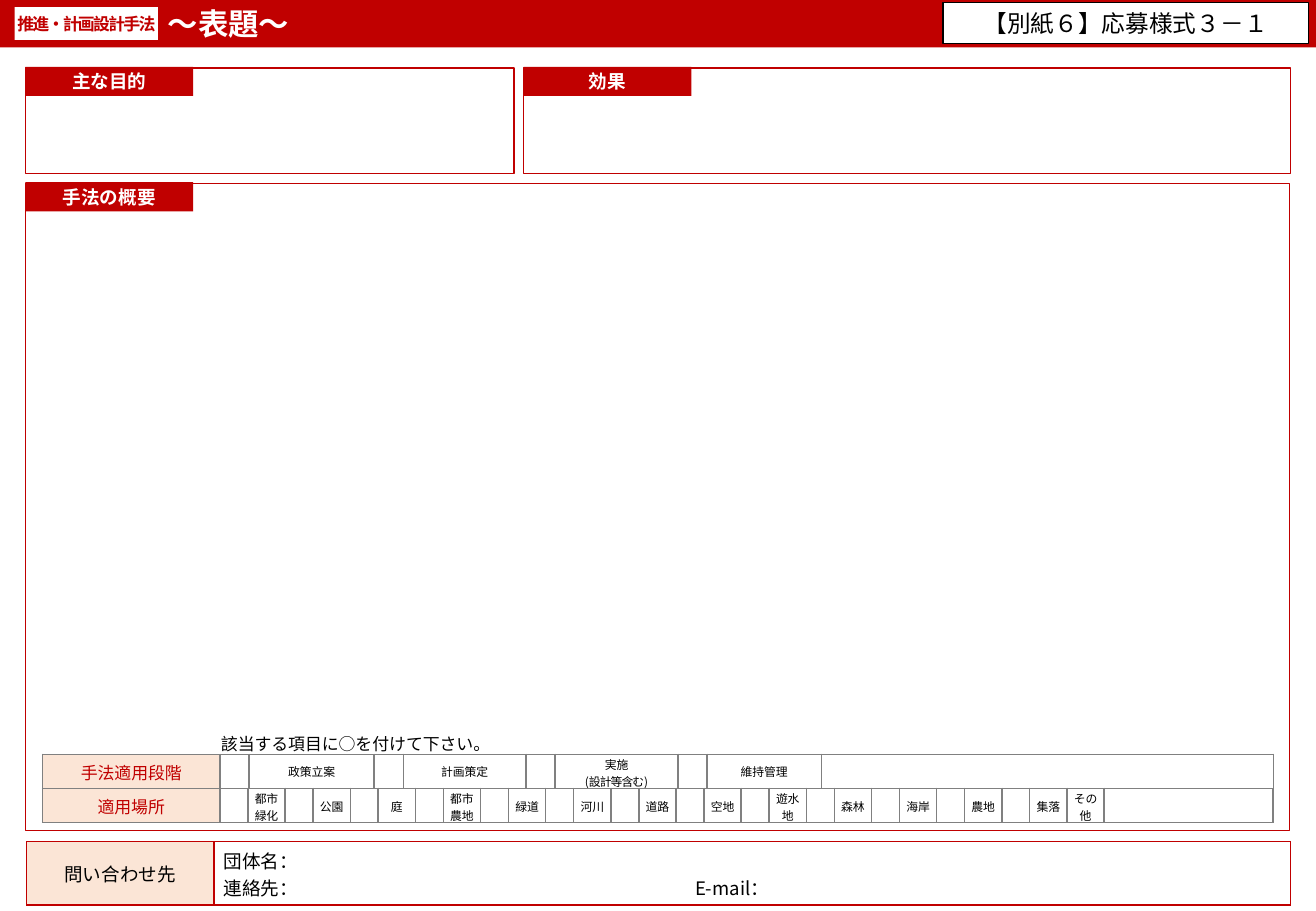
"""Build the one-page application form for a promotion, planning and design method."""
from lxml import etree
from pptx import Presentation
from pptx.dml.color import RGBColor
from pptx.enum.shapes import MSO_SHAPE
from pptx.enum.text import MSO_ANCHOR, PP_ALIGN
from pptx.oxml.ns import qn
from pptx.util import Inches, Pt

RECTANGLE = MSO_SHAPE.RECTANGLE
MIDDLE = MSO_ANCHOR.MIDDLE
CENTER, LEFT = PP_ALIGN.CENTER, PP_ALIGN.LEFT
RED = RGBColor(0xC0, 0x00, 0x00)
PEACH = RGBColor(0xFB, 0xE5, 0xD6)
GRAY = RGBColor(0x80, 0x80, 0x80)
WHITE = RGBColor(0xFF, 0xFF, 0xFF)
BLACK = RGBColor(0x00, 0x00, 0x00)
FONT = "Noto Sans CJK JP"
TIGHT = (0.01, 0.01, 0.01, 0)
ROOMY = (0.08, 0.04, 0.08, 0.04)


def write(frame, text, size, color, align=CENTER, bold=False, spacing=0):
    """Fill a text frame with one paragraph per line of text."""
    formats = {"size": Pt(size), "bold": bold, "name": FONT}
    frame.word_wrap = True
    for index, line in enumerate(text.split("\n")):
        para = frame.add_paragraph() if index else frame.paragraphs[0]
        para.alignment = align
        if not line:
            etree.SubElement(para._p, qn("a:endParaRPr"), sz=str(size * 100))
            continue
        span = para.add_run()
        span.text = line
        for name, value in formats.items():
            setattr(span.font, name, value)
        span.font.color.rgb = color
        properties = span.font._element
        properties.set("spc", str(-50 if line.startswith("(") else spacing))
        etree.SubElement(properties, qn("a:ea"), typeface=FONT)


def draw_table(left, top, height, widths, entries, border):
    """Draw a one-row table from (text, size, colour, alignment, margins, fill) entries."""
    frame = page.shapes.add_table(1, len(widths), Inches(left), Inches(top),
                                  Inches(sum(widths)), Inches(height))
    table = frame.table
    table.first_row = table.horz_banding = False
    table.rows[0].height = Inches(height)
    for column, width, cell, entry in zip(table.columns, widths, table.rows[0].cells, entries):
        text, size, color, align, margins, fill = entry
        column.width = Inches(width)
        cell.vertical_anchor = MIDDLE
        for side, margin in zip(("left", "top", "right", "bottom"), margins):
            setattr(cell, f"margin_{side}", Inches(margin))
        write(cell.text_frame, text, size, color, align)
        for edge in ("a:lnL", "a:lnR", "a:lnT", "a:lnB"):
            line = etree.SubElement(cell._tc.get_or_add_tcPr(), qn(edge), w=str(Pt(1)))
            solid = etree.SubElement(line, qn("a:solidFill"))
            etree.SubElement(solid, qn("a:srgbClr"), val=str(border))
        if fill is None:
            cell.fill.background()
        else:
            cell.fill.solid()
            cell.fill.fore_color.rgb = fill
    return table


deck = Presentation()
deck.slide_width, deck.slide_height = Inches(10.83), Inches(7.5)
page = deck.slides.add_slide(deck.slide_layouts[5])

title = page.shapes.title
title.left, title.top, title.width, title.height = 0, 0, deck.slide_width, Inches(0.39)
title.fill.solid()
title.fill.fore_color.rgb = RED
title.text_frame.margin_left = Inches(1.38)
title.text_frame.vertical_anchor = MIDDLE
write(title.text_frame, "～表題～", 18, WHITE, LEFT, bold=True)

panels = [
    ("主な目的", 0.21, 0.56, 4.02, 0.87),
    ("効果", 4.31, 0.56, 6.31, 0.87),
    ("手法の概要", 0.21, 1.51, 10.4, 5.33),
]
boxes = [("推進・計画設計手法", 0.12, 0.06, 1.18, 0.27, WHITE, None, 10, RED, True, -100),
         ("【別紙６】応募様式３－１", 7.76, 0.02, 3.01, 0.34, WHITE, BLACK, 14, BLACK, False, 0)]
for heading, left, top, width, height in panels:
    boxes.append(("", left, top, width, height, None, RED, 11, RED, False, 0))
    boxes.append((heading, left, top - 0.01, 1.38, 0.24, RED, None, 11, WHITE, True, 0))

for text, left, top, width, height, fill, outline, size, color, bold, spacing in boxes:
    box = page.shapes.add_shape(RECTANGLE, Inches(left), Inches(top),
                                Inches(width), Inches(height))
    box.shadow.inherit = False
    if fill is None:
        box.fill.background()
    else:
        box.fill.solid()
        box.fill.fore_color.rgb = fill
    if outline is None:
        box.line.fill.background()
    else:
        box.line.color.rgb = outline
        box.line.width = Pt(0.75)
    frame = box.text_frame
    frame.vertical_anchor = MIDDLE
    frame.margin_left = frame.margin_right = 0
    write(frame, text, size, color, bold=bold, spacing=spacing)

hint = page.shapes.add_textbox(Inches(1.72), Inches(5.99), Inches(2.42), Inches(0.27))
write(hint.text_frame, "該当する項目に○を付けて下さい。", 10, BLACK, LEFT)

stages = ["政策立案", "計画策定", "実施\n(設計等含む)", "維持管理"]
places = ["都市\n緑化", "公園", "庭", "都市\n農地", "緑道", "河川", "道路", "空地",
          "遊水地", "森林", "海岸", "農地", "集落"]
stage_texts = [text for stage in stages for text in ("", stage)] + [""]
place_texts = [text for place in places for text in ("", place)] + ["その\n他", ""]

mark = 0.23
label = (7.28 - mark * len(places)) / (len(places) + 1)
stage_widths = [1.46, 0.24, 1.03, 0.24, 1.01, 0.24, 1.01, 0.24, 0.94, 3.72]
place_widths = [1.46] + [mark, label] * len(places) + [label, 1.39]

choices = [("手法適用段階", 6.21, stage_widths, stage_texts),
           ("適用場所", 6.49, place_widths, place_texts)]
for heading, top, widths, texts in choices:
    entries = [(heading, 10, RED, CENTER, TIGHT, PEACH)]
    entries += [(text, 7, BLACK, CENTER, TIGHT, None) for text in texts]
    draw_table(0.35, top, 0.28, widths, entries, GRAY)

contact = draw_table(0.22, 6.93, 0.52, [1.54, 8.86], [
    ("問い合わせ先", 11, BLACK, CENTER, ROOMY, PEACH),
    ("団体名：\n連絡先：\tE-mail：", 11, BLACK, LEFT, ROOMY, WHITE),
], RED)
for para in contact.cell(0, 1).text_frame.paragraphs:
    tabs = etree.SubElement(para._p.get_or_add_pPr(), qn("a:tabLst"))
    etree.SubElement(tabs, qn("a:tab"), pos=str(Inches(3.88)), algn="l")

deck.save("out.pptx")
